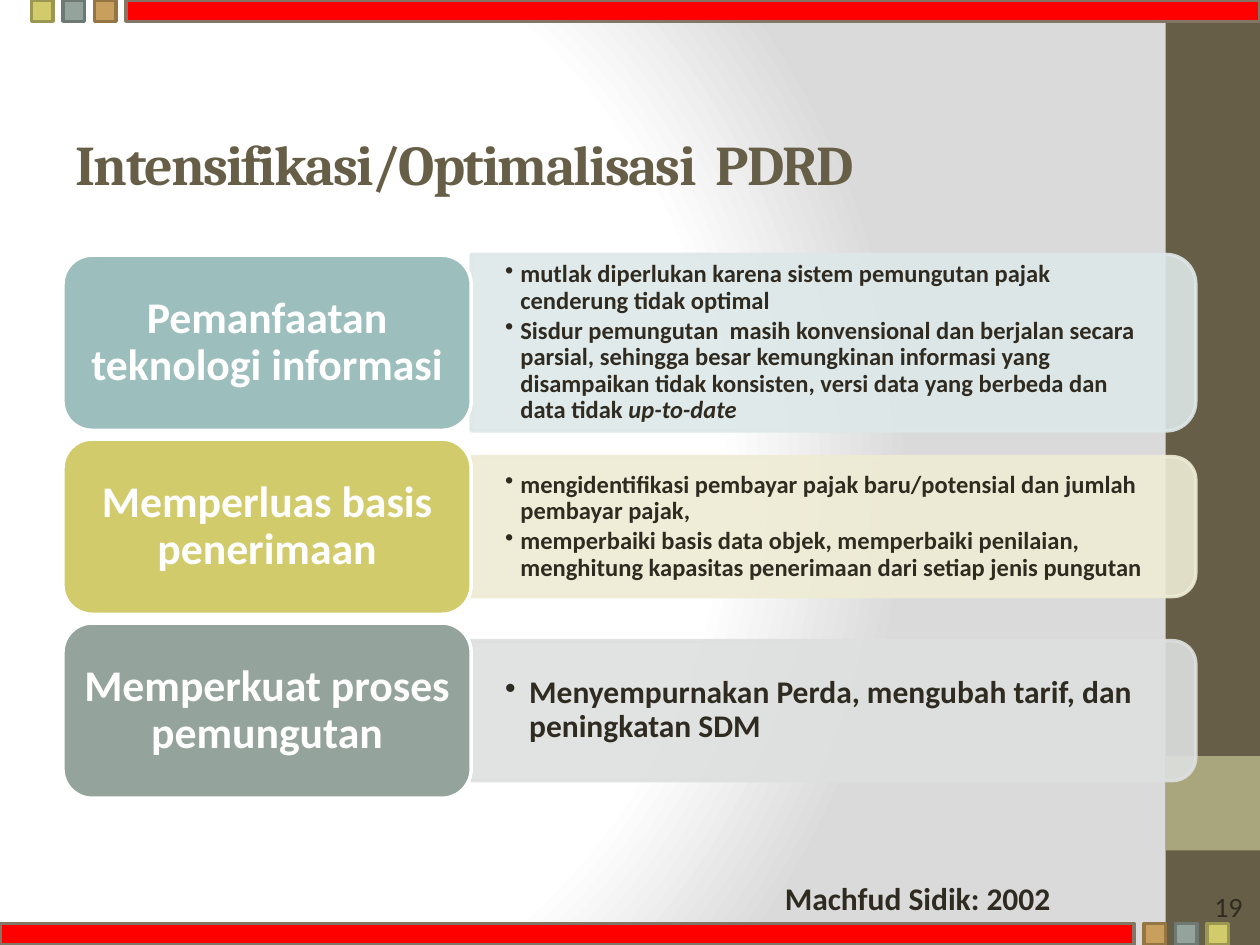
from dataclasses import dataclass

import pptx
import pptx.dml.color
import pptx.enum.shapes
import pptx.enum.text
import pptx.oxml
import pptx.oxml.ns
import pptx.util
from lxml import etree

Inches, Pt = pptx.util.Inches, pptx.util.Pt
SHAPE = pptx.enum.shapes.MSO_SHAPE
ALIGN = pptx.enum.text.PP_ALIGN
MIDDLE = pptx.enum.text.MSO_ANCHOR.MIDDLE
qn = pptx.oxml.ns.qn
DARK, WHITE, OLIVE = "2F2B20", "FFFFFF", "675E47"


@dataclass
class Row:
    heading: str
    points: list[str]  # text between asterisks is italic
    color: str
    tint: str
    height: float
    size: int
    hang: float


@dataclass
class Square:
    top_x: float
    bottom_x: float
    fill: str
    line: str


ROWS = [
    Row("Pemanfaatan teknologi informasi",
        ["mutlak diperlukan karena sistem pemungutan pajak cenderung tidak optimal",
         "Sisdur pemungutan  masih konvensional dan berjalan secara parsial, sehingga "
         "besar kemungkinan informasi yang disampaikan tidak konsisten, versi data "
         "yang berbeda dan data tidak *up-to-date*"],
        "9CBEBD", "DEE8E8", 1.4, 14, 0.12),
    Row("Memperluas basis penerimaan",
        ["mengidentifikasi pembayar pajak baru/potensial dan jumlah pembayar pajak,",
         "memperbaiki basis data objek, memperbaiki penilaian, menghitung kapasitas "
         "penerimaan dari setiap jenis pungutan"],
        "D2CB6C", "EEECD4", 1.11, 14, 0.12),
    Row("Memperkuat proses pemungutan",
        ["Menyempurnakan Perda, mengubah tarif, dan peningkatan SDM"],
        "95A39D", "DDE0DF", 1.11, 18, 0.19),
]
SQUARES = [
    Square(0.75, 9.08, "C89F5D", "947645"),
    Square(0.5, 9.33, "95A39D", "6E7974"),
    Square(0.25, 9.58, "D2CB6C", "9B9650"),
]


def paint(fill, color: str, alpha: int = 100) -> None:
    """Give a fill a solid hex colour, optionally translucent."""
    fill.solid()
    fill.fore_color.rgb = pptx.dml.color.RGBColor.from_string(color)
    if alpha < 100:
        clr = fill._xPr.find(".//" + qn("a:srgbClr"))
        etree.SubElement(clr, qn("a:alpha"), val=str(alpha * 1000))


def add_box(s, kind, x: float, y: float, w: float, h: float, fill: str | None = None,
            line: str | None = None, alpha: int = 100):
    sp = s.shapes.add_shape(kind, Inches(x), Inches(y), Inches(w), Inches(h))
    sp.shadow.inherit = False
    if fill:
        paint(sp.fill, fill, alpha)
    else:
        sp.fill.background()
    if line:
        paint(sp.line.fill, line, alpha)
        sp.line.width = Pt(2)
    else:
        sp.line.fill.background()
    return sp


def write(tf, *texts: str, size: int, color: str = DARK, font: str = "Calibri",
          bold: bool = True, align=ALIGN.LEFT, anchor=MIDDLE, spacing: float = 1,
          after: float = 0, hang: float = 0, tracking: int = 0,
          margins: tuple[float, float] = (0.1, 0.05)) -> None:
    """Write one paragraph per text; asterisks toggle italics."""
    tf.word_wrap = True
    tf.vertical_anchor = anchor
    tf.margin_left = tf.margin_right = Inches(margins[0])
    tf.margin_top = tf.margin_bottom = Inches(margins[1])
    for i, text in enumerate(texts):
        p = tf.add_paragraph() if i else tf.paragraphs[0]
        if hang:
            pPr = p._p.get_or_add_pPr()
            pPr.set("marL", str(Inches(hang)))
            pPr.set("indent", str(-Inches(hang)))
            etree.SubElement(pPr, qn("a:buChar"), char="•")
        p.alignment, p.line_spacing, p.space_after = align, spacing, Pt(after)
        for j, part in enumerate(text.split("*")):
            if not part:
                continue
            r = p.add_run()
            r.text = part
            r.font.name, r.font.size, r.font.bold = font, Pt(size), bold
            if j % 2:
                r.font.italic = True
            paint(r.font.fill, color)
            if tracking:
                r._r.get_or_add_rPr().set("spc", str(tracking))


def add_text(s, x: float, y: float, w: float, h: float, *texts: str, **fmt) -> None:
    sp = s.shapes.add_textbox(Inches(x), Inches(y), Inches(w), Inches(h))
    write(sp.text_frame, *texts, **fmt)


def set_background(s) -> None:
    """Radial gradient from white to grey."""
    stops = "".join(f'<a:gs pos="{pos}000"><a:srgbClr val="{c}"/></a:gs>'
                    for pos, c in [(0, WHITE), (75, WHITE), (100, "DADADA")])
    bg = pptx.oxml.parse_xml(
        f'<p:bg {pptx.oxml.ns.nsdecls("p", "a")}><p:bgPr><a:gradFill rotWithShape="1">'
        f'<a:gsLst>{stops}</a:gsLst><a:path path="circle">'
        '<a:fillToRect l="20000" t="50000" r="100000" b="50000"/></a:path>'
        '</a:gradFill><a:effectLst/></p:bgPr></p:bg>')
    s._element.cSld.insert(0, bg)


def add_frame(s) -> None:
    """Side band, red bars and corner squares."""
    add_box(s, SHAPE.RECTANGLE, 9.25, 0, 0.75, 7.5, OLIVE)
    add_box(s, SHAPE.RECTANGLE, 9.25, 6, 0.75, 0.75, "A9A57C")
    for x, y in [(1, 0), (0, 7.33)]:
        add_box(s, SHAPE.RECTANGLE, x, y, 9, 0.17, "FF0000", "837665")
    for sq in SQUARES:
        for x, y in [(sq.top_x, 0), (sq.bottom_x, 7.33)]:
            add_box(s, SHAPE.RECTANGLE, x, y, 0.17, 0.17, sq.fill, sq.line)


def add_row(s, row: Row, middle: float) -> None:
    """Heading card with its panel of points, centred on a height."""
    left, width, card_h = 3.74, 5.75, 1.39
    # The panel is a tab turned a quarter so its round corners face right
    panel = add_box(s, SHAPE.ROUND_2_SAME_RECTANGLE, left + (width - row.height) / 2,
                    middle - width / 2, row.height, width, row.tint, row.tint, 90)
    panel.rotation = 90
    text_h = row.height - 0.12
    add_text(s, left, middle - text_h / 2, 5.7, text_h, *row.points, size=row.size,
             spacing=0.9, after=2, hang=row.hang, margins=(0.27, 0.14))
    card = add_box(s, SHAPE.ROUNDED_RECTANGLE, 0.5, middle - card_h / 2, 3.24, card_h,
                   row.color, WHITE)
    write(card.text_frame, row.heading, size=25, color=WHITE, align=ALIGN.CENTER,
          spacing=0.9)


def main() -> None:
    prs = pptx.Presentation()
    prs.slide_width, prs.slide_height = Inches(10), Inches(7.5)
    s = prs.slides.add_slide(prs.slide_layouts[5])
    set_background(s)
    add_frame(s)

    # Title
    title = s.shapes.title
    title.left, title.top = Inches(0.5), Inches(0.67)
    title.width, title.height = Inches(9), Inches(1.25)
    write(title.text_frame, "Intensifikasi/Optimalisasi  PDRD", size=32, color=OLIVE,
          font="Cambria", tracking=-100)

    # Three strategies
    for i, row in enumerate(ROWS):
        add_row(s, row, 2.72 + 1.46 * i)

    # Slide number and source
    number = add_box(s, SHAPE.DOUBLE_BRACKET, 9.5, 7.11, 0.5, 0.17)
    write(number.text_frame, "19", size=16, bold=False, align=ALIGN.CENTER,
          margins=(0, 0))
    add_text(s, 6.13, 6.93, 2.91, 0.4, "Machfud Sidik: 2002", size=18,
             anchor=pptx.enum.text.MSO_ANCHOR.TOP)
    prs.save("out.pptx")


if __name__ == "__main__":
    main()
